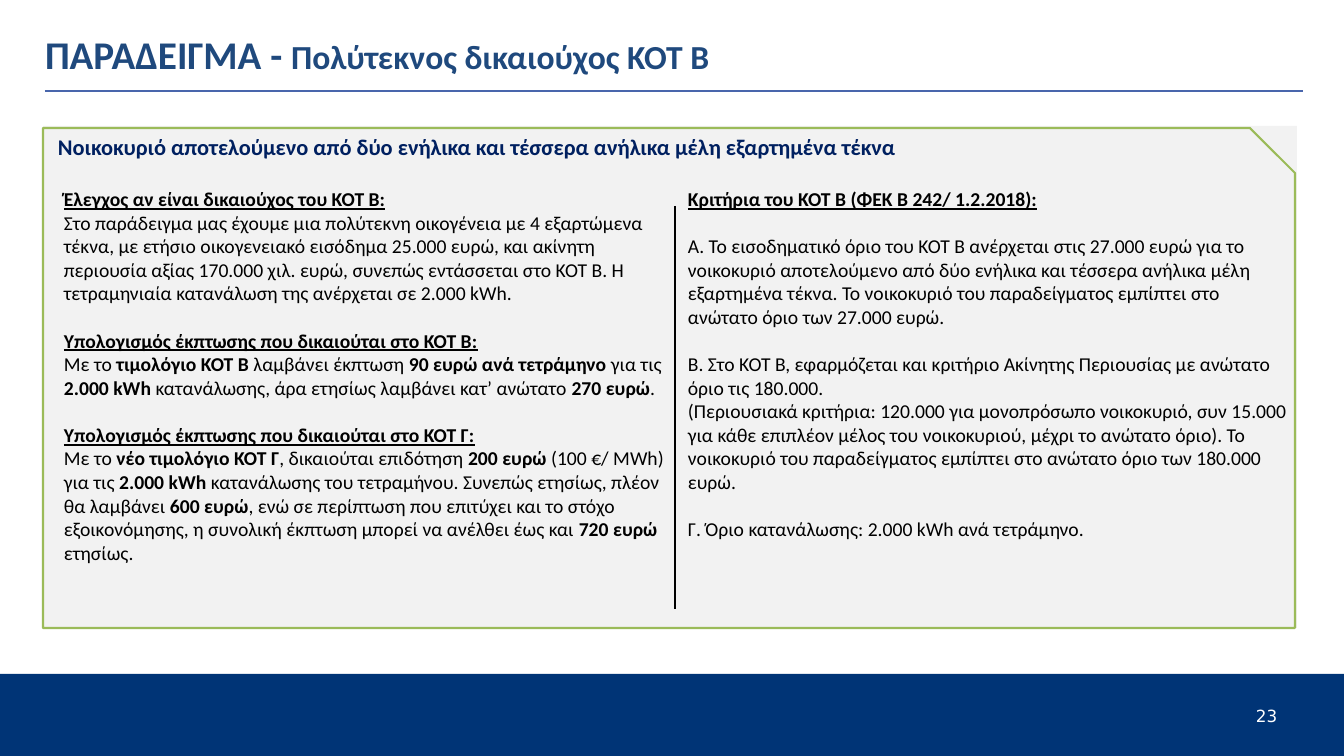
from pptx import Presentation
from pptx.dml.color import RGBColor
from pptx.enum.shapes import MSO_CONNECTOR, MSO_SHAPE
from pptx.enum.text import MSO_ANCHOR
from pptx.oxml.ns import qn
from pptx.util import Pt
from lxml import etree

PX = 9144000 / 1008  # EMU per px, 100.8 px to the inch
RECT, SNIP = MSO_SHAPE.RECTANGLE, MSO_SHAPE.SNIP_ROUND_RECTANGLE
STRAIGHT = MSO_CONNECTOR.STRAIGHT
TOP, MIDDLE = MSO_ANCHOR.TOP, MSO_ANCHOR.MIDDLE

NAVY = RGBColor(0x00, 0x34, 0x76)
RULE_BLUE = RGBColor(0x49, 0x66, 0xAC)
TITLE_BLUE = RGBColor(0x1F, 0x49, 0x7D)
HEAD_BLUE = RGBColor(0x00, 0x20, 0x60)
GREEN = RGBColor(0x9B, 0xBB, 0x59)
GREY = RGBColor(0xF2, 0xF2, 0xF2)
BLACK = RGBColor(0x00, 0x00, 0x00)
WHITE = RGBColor(0xFF, 0xFF, 0xFF)

prs = Presentation()
prs.slide_width, prs.slide_height = round(1344 * PX), round(756 * PX)
s = prs.slides.add_slide(prs.slide_layouts[6])


def box(*px):
    return [round(v * PX) for v in px]


def add_text(p, text, size=14, color=BLACK, font="Calibri", bold=False, underline=False):
    """Add runs to a paragraph; ** switches bold on and off."""
    for i, part in enumerate(text.split("**")):
        if part:
            r = p.add_run()
            r.text = part
            r.font.name, r.font.size = font, Pt(size)
            r.font.bold, r.font.underline = bold != (i % 2 == 1), underline
            r.font.color.rgb = color


# Footer band, grey panel and its green frame
for kind, area, fill, line in [
    (RECT, (0, 674, 1344, 82), NAVY, None),
    (RECT, (43, 126, 1254, 502), GREY, None),
    (SNIP, (43, 128, 1252, 500), None, GREEN),
]:
    sp = s.shapes.add_shape(kind, *box(*area))
    sp.shadow.inherit = False
    if fill is None:
        sp.fill.background()
    else:
        sp.fill.solid()
        sp.fill.fore_color.rgb = fill
    if line is None:
        sp.line.fill.background()
    else:
        sp.line.color.rgb, sp.line.width = line, Pt(1.5)
    if kind == SNIP:
        sp.adjustments[0], sp.adjustments[1] = 0, 0.09

# Title rule and column divider
for ends, color in [((45, 91, 1303, 91), RULE_BLUE), ((675, 206, 675, 609), BLACK)]:
    cx = s.shapes.add_connector(STRAIGHT, *box(*ends))
    cx.line.color.rgb, cx.line.width = color, Pt(1)
    etree.SubElement(cx._element.spPr, qn("a:effectLst"))

# Title, panel heading and page number: area, inset, anchor, line spacing, runs
for area, inset, anchor, spacing, runs in [
    ((45, 25, 1254, 58), False, MIDDLE, 1.0, [
        ("ΠΑΡΑΔΕΙΓΜΑ - ", dict(size=28, color=TITLE_BLUE, bold=True)),
        ("Πολύτεκνος δικαιούχος ΚΟΤ Β", dict(size=24, color=TITLE_BLUE, bold=True)),
    ]),
    ((48, 128, 892, 64), True, TOP, 1.0, [
        ("Νοικοκυριό αποτελούμενο από δύο ενήλικα και τέσσερα ανήλικα μέλη "
         "εξαρτημένα τέκνα", dict(size=16, color=HEAD_BLUE, bold=True)),
    ]),
    ((1256, 708, 42, 14), False, TOP, 0.87, [
        ("23", dict(size=12, color=WHITE, font="DejaVu Sans")),
    ]),
]:
    tf = s.shapes.add_textbox(*box(*area)).text_frame
    tf.word_wrap, tf.vertical_anchor = True, anchor
    if not inset:
        tf.margin_left = tf.margin_right = tf.margin_top = tf.margin_bottom = 0
    p = tf.paragraphs[0]
    p.line_spacing = spacing
    for text, fmt in runs:
        add_text(p, text, **fmt)

# Two columns: each inner list is a block, set apart by one line; # marks a heading
left = [
    ["#Έλεγχος αν είναι δικαιούχος του ΚΟΤ Β:",
     "Στο παράδειγμα μας έχουμε μια πολύτεκνη οικογένεια με 4 εξαρτώμενα τέκνα, με ετήσιο "
     "οικογενειακό εισόδημα 25.000 ευρώ, και ακίνητη περιουσία αξίας 170.000 χιλ. ευρώ, "
     "συνεπώς εντάσσεται στο ΚΟΤ Β. Η τετραμηνιαία κατανάλωση της ανέρχεται σε 2.000 kWh."],
    ["#Υπολογισμός έκπτωσης που δικαιούται στο ΚΟΤ Β:",
     "Με το **τιμολόγιο ΚΟΤ Β** λαμβάνει έκπτωση **90 ευρώ ανά τετράμηνο** για τις "
     "**2.000 kWh** κατανάλωσης, άρα ετησίως λαμβάνει κατ’ ανώτατο **270 ευρώ**."],
    ["#Υπολογισμός έκπτωσης που δικαιούται στο ΚΟΤ Γ:",
     "Με το **νέο τιμολόγιο ΚΟΤ Γ**, δικαιούται επιδότηση **200 ευρώ** (100 €/ MWh) για τις "
     "**2.000 kWh **κατανάλωσης του τετραμήνου. Συνεπώς ετησίως, πλέον θα λαμβάνει "
     "**600 ευρώ**, ενώ σε περίπτωση που επιτύχει και το στόχο εξοικονόμησης, η συνολική "
     "έκπτωση μπορεί να ανέλθει έως και **720 ευρώ **ετησίως."],
]
right = [
    ["#Κριτήρια του ΚΟΤ Β (ΦΕΚ Β 242/ 1.2.2018):"],
    ["Α. Το εισοδηματικό όριο του ΚΟΤ Β ανέρχεται στις 27.000 ευρώ για το νοικοκυριό "
     "αποτελούμενο από δύο ενήλικα και τέσσερα ανήλικα μέλη εξαρτημένα τέκνα. Το νοικοκυριό "
     "του παραδείγματος εμπίπτει στο ανώτατο όριο των 27.000 ευρώ."],
    ["Β. Στο ΚΟΤ Β, εφαρμόζεται και κριτήριο Ακίνητης Περιουσίας με ανώτατο όριο τις 180.000.",
     "(Περιουσιακά κριτήρια: 120.000 για μονοπρόσωπο νοικοκυριό, συν 15.000 για κάθε "
     "επιπλέον μέλος του νοικοκυριού, μέχρι το ανώτατο όριο). Το νοικοκυριό του "
     "παραδείγματος εμπίπτει στο ανώτατο όριο των 180.000 ευρώ."],
    ["Γ. Όριο κατανάλωσης: 2.000 kWh ανά τετράμηνο."],
]
for x, blocks in [(54, left), (678, right)]:
    tf = s.shapes.add_textbox(*box(x, 182, 624, 400)).text_frame
    tf.word_wrap = True
    for b, block in enumerate(blocks):
        for i, text in enumerate(block):
            first = b == 0 and i == 0
            p = tf.paragraphs[0] if first else tf.add_paragraph()
            if b > 0 and i == 0:
                p.space_before = Pt(17)
            heading = text.startswith("#")
            add_text(p, text.lstrip("#"), bold=heading, underline=heading)

prs.save("out.pptx")
